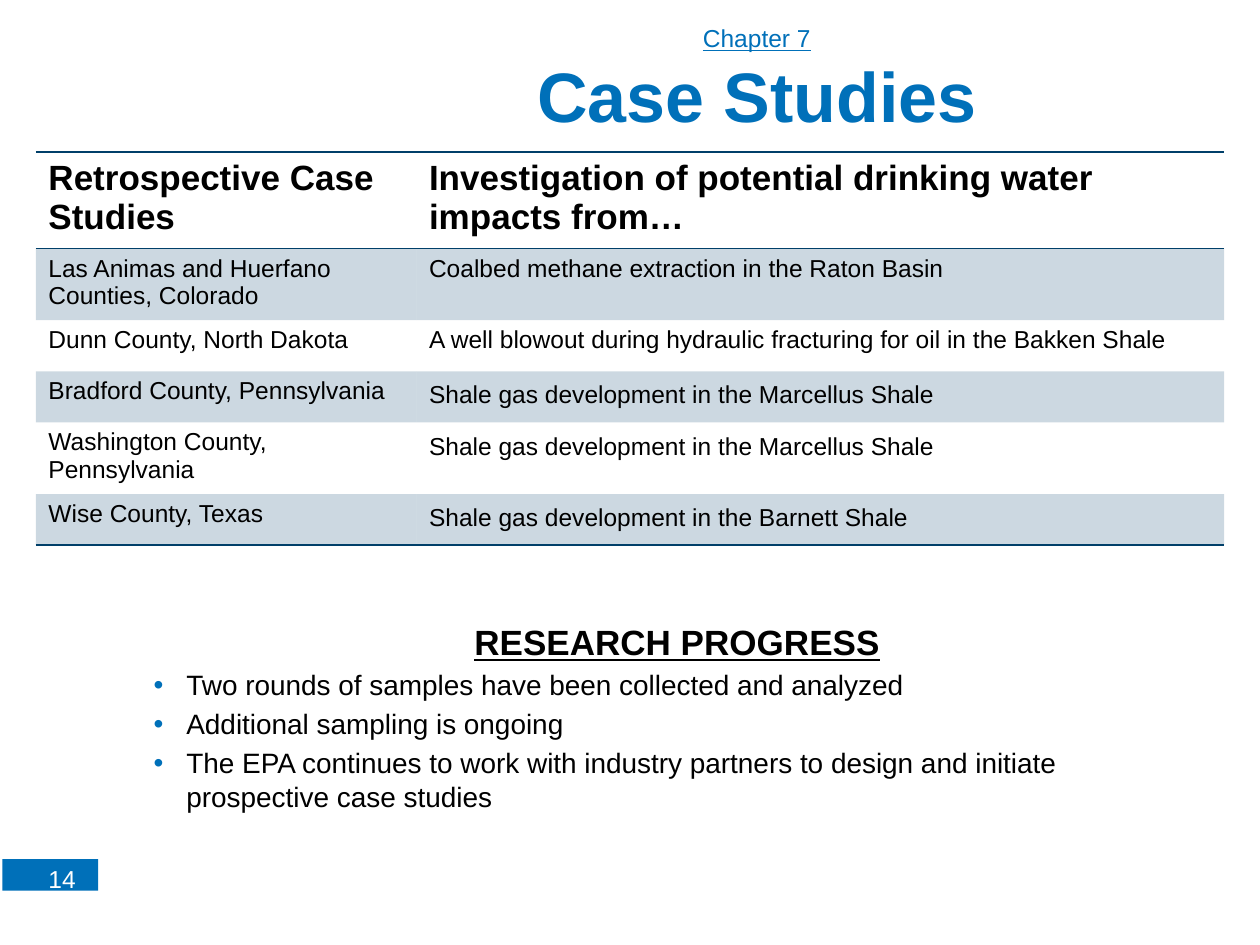
from pptx import Presentation
from pptx.dml.color import RGBColor
from pptx.enum.shapes import MSO_SHAPE as Shape
from pptx.enum.text import MSO_ANCHOR as Anchor, MSO_AUTO_SIZE as AutoSize, PP_ALIGN as Align
from pptx.oxml import parse_xml
from pptx.oxml.ns import nsdecls, qn
from pptx.util import Pt

COLORS = {"blue": "0070B9", "navy": "003F69", "black": "000000", "white": "FFFFFF"}
FONT = "Arial"
NO_TABLE_STYLE = "{2D5ABB26-0587-4C30-8999-92F81FD0307C}"

HEADER = ("Retrospective Case Studies",
          "Investigation of potential drinking water impacts from…")
CASES = [
    ("Las Animas and Huerfano Counties, Colorado",
     "Coalbed methane extraction in the Raton Basin"),
    ("Dunn County, North Dakota",
     "A well blowout during hydraulic fracturing for oil in the Bakken Shale"),
    ("Bradford County, Pennsylvania", "Shale gas development in the Marcellus Shale"),
    ("Washington County, Pennsylvania", "Shale gas development in the Marcellus Shale"),
    ("Wise County, Texas", "Shale gas development in the Barnett Shale"),
]
COLUMN_WIDTHS = (217.5, 461.5)
ROW_HEIGHTS = (55, 41, 29.2, 29.2, 41, 29.2)
PROGRESS = [
    "Two rounds of samples have been collected and analyzed",
    "Additional sampling is ongoing",
    "The EPA continues to work with industry partners to design and initiate "
    "prospective case studies",
]


def rgb(name):
    return RGBColor.from_string(COLORS[name])


def place(shape, left, top, width, height):
    box = {"left": left, "top": top, "width": width, "height": height}
    for name, value in box.items():
        setattr(shape, name, Pt(value))


def write(paragraph, text, size, color="black", bold=False, underline=False, **layout):
    """Add one run; layout holds paragraph attributes such as alignment."""
    for name, value in layout.items():
        setattr(paragraph, name, value)
    run = paragraph.add_run()
    run.text = text
    font = {"name": FONT, "size": Pt(size), "bold": bold, "underline": underline}
    for name, value in font.items():
        setattr(run.font, name, value)
    run.font.color.rgb = rgb(color)


def set_bullet(paragraph, char=None):
    properties = paragraph._p.get_or_add_pPr()
    properties.set("marL", str(Pt(18.7)))
    properties.set("indent", str(-Pt(18.7)))
    if char is None:
        properties.append(parse_xml(f"<a:buNone {nsdecls('a')}/>"))
        return
    for xml in (f'<a:buClr {nsdecls("a")}><a:srgbClr val="{COLORS["blue"]}"/></a:buClr>',
                f'<a:buFont {nsdecls("a")} typeface="{FONT}"/>',
                f'<a:buChar {nsdecls("a")} char="{char}"/>'):
        properties.append(parse_xml(xml))


def prepare_frame(shape, anchor):
    frame = shape.text_frame
    frame.word_wrap = True
    frame.auto_size = AutoSize.NONE
    frame.vertical_anchor = anchor
    return frame


def add_title(slide):
    title = slide.shapes.title
    place(title, 178, 9.4, 509, 72.7)
    frame = prepare_frame(title, Anchor.MIDDLE)
    write(frame.paragraphs[0], "Chapter 7", 14, "blue", underline=True,
          alignment=Align.CENTER)
    write(frame.add_paragraph(), "Case Studies", 40, "blue", bold=True,
          alignment=Align.CENTER)


def add_border(cell, side):
    cell._tc.get_or_add_tcPr().append(parse_xml(
        f'<a:{side} {nsdecls("a")} w="{Pt(1)}"><a:solidFill>'
        f'<a:srgbClr val="{COLORS["navy"]}"/></a:solidFill></a:{side}>'))


def shade(cell):
    cell.fill.solid()
    cell.fill.fore_color.rgb = rgb("navy")
    color = cell._tc.tcPr.find(qn("a:solidFill")).find(qn("a:srgbClr"))
    color.append(parse_xml(f'<a:alpha {nsdecls("a")} val="20000"/>'))


def add_case_table(slide):
    rows = [HEADER, *CASES]
    frame = slide.shapes.add_table(len(rows), len(HEADER), Pt(20.5), Pt(87),
                                   Pt(sum(COLUMN_WIDTHS)), Pt(sum(ROW_HEIGHTS)))
    table = frame.table
    table.first_row = table.horz_banding = False
    table._tbl.tblPr.find(qn("a:tableStyleId")).text = NO_TABLE_STYLE
    for column, width in zip(table.columns, COLUMN_WIDTHS):
        column.width = Pt(width)
    for r, (row, height) in enumerate(zip(rows, ROW_HEIGHTS)):
        table.rows[r].height = Pt(height)
        for c, text in enumerate(row):
            cell = table.cell(r, c)
            is_header = r == 0
            # The shale gas entries are set with looser lines
            layout = {"line_spacing": 1.15} if text.startswith("Shale gas") else {}
            write(cell.text_frame.paragraphs[0], text, 20 if is_header else 14,
                  bold=is_header, **layout)
            if is_header:
                add_border(cell, "lnT")
            if is_header or r == len(rows) - 1:
                add_border(cell, "lnB")
            if r % 2:
                shade(cell)
            else:
                cell.fill.background()


def add_progress(slide):
    body = slide.placeholders[1]
    place(body, 80.6, 350.6, 613.4, 118)
    frame = prepare_frame(body, Anchor.MIDDLE)
    frame.margin_right = Pt(8)
    heading = frame.paragraphs[0]
    set_bullet(heading)
    write(heading, "RESEARCH PROGRESS", 20, bold=True, underline=True,
          alignment=Align.CENTER, space_before=Pt(0))
    for text in PROGRESS:
        paragraph = frame.add_paragraph()
        set_bullet(paragraph, "•")
        write(paragraph, text, 16, alignment=Align.LEFT, space_before=Pt(3))


def add_page_number(slide):
    band = slide.shapes.add_shape(Shape.RECTANGLE, Pt(1.4), Pt(491), Pt(54.7), Pt(18))
    band.shadow.inherit = False
    band.fill.solid()
    band.fill.fore_color.rgb = rgb("blue")
    band.line.fill.background()
    number = slide.shapes.add_textbox(Pt(0), Pt(490), Pt(50.4), Pt(23.4))
    frame = prepare_frame(number, Anchor.TOP)
    write(frame.paragraphs[0], "14", 14, "white", alignment=Align.RIGHT)


def main():
    presentation = Presentation()
    presentation.slide_width, presentation.slide_height = Pt(720), Pt(540)
    slide = presentation.slides.add_slide(presentation.slide_layouts[1])
    add_page_number(slide)
    add_title(slide)
    add_case_table(slide)
    add_progress(slide)
    presentation.save("out.pptx")


if __name__ == "__main__":
    main()
